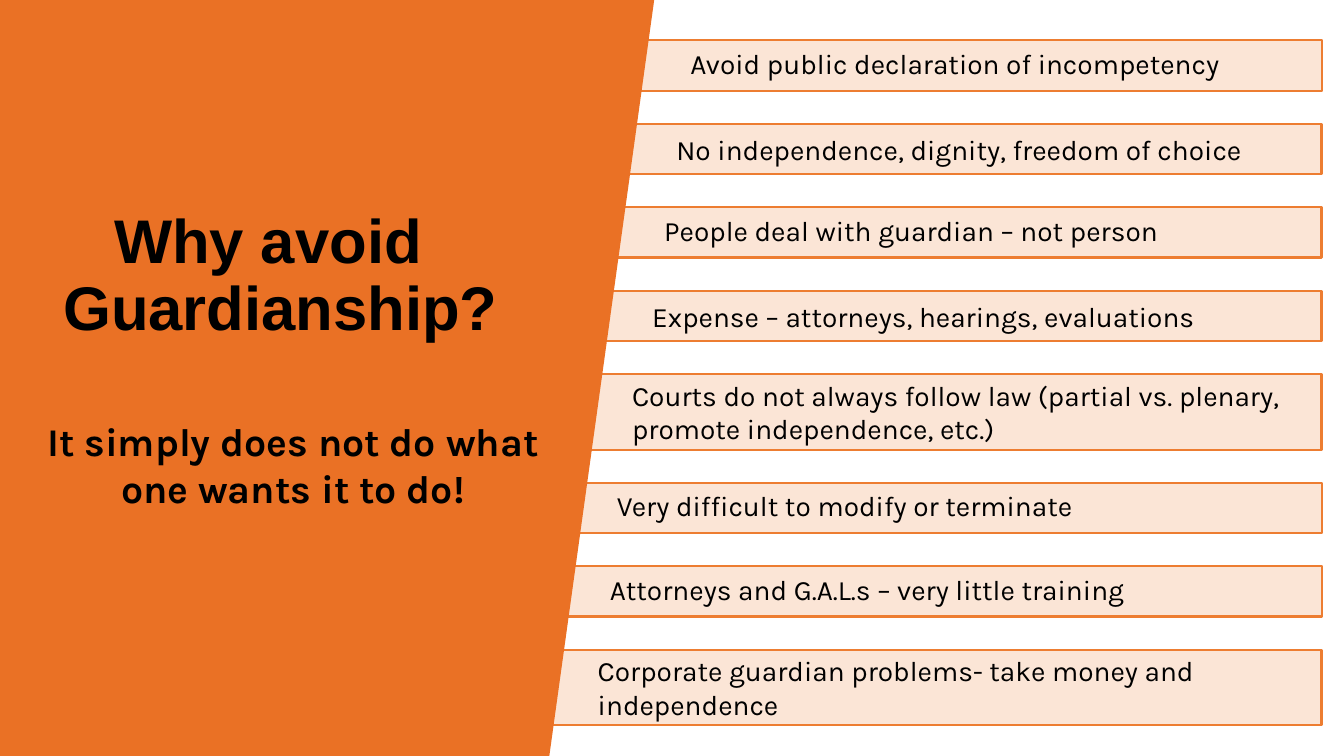
import pptx
import pptx.util
import pptx.dml.color
import pptx.enum.shapes
import pptx.enum.text

Pt = pptx.util.Pt
RGB = pptx.dml.color.RGBColor
ALIGN = pptx.enum.text.PP_ALIGN
ANCHOR = pptx.enum.text.MSO_ANCHOR

# Content: left edge, height, line spacing, wording
BARS = [
    (457.9, 36, 0.9, "Avoid public declaration of incompetency"),
    (447.8, 36, 1, "No independence, dignity, freedom of choice"),
    (439.2, 36, 0.9, "People deal with guardian – not person"),
    (430.6, 36, 1, "Expense – attorneys, hearings, evaluations"),
    (416.2, 54, 1, "Courts do not always follow law (partial vs. plenary, "
                   "promote independence, etc.)"),
    (405.4, 36, 0.9, "Very difficult to modify or terminate"),
    (400.3, 36, 0.9, "Attorneys and G.A.L.s – very little training"),
    (391.7, 54, 1, "Corporate guardian problems- take money and independence"),
]
TITLE = "Why avoid Guardianship?"
CLAIM = "It simply does not do what one wants it to do!"

# Layout and colours
WIDE, HIGH = 960, 540
TOP, RIGHT, GAP = 28.8, 944, 23.6
PANEL = [(-11.5, 0), (467.3, 0), (392.4, HIGH), (-11.5, HIGH)]
PEACH = RGB(0xFB, 0xE5, 0xD6)
EDGE = RGB(0xED, 0x7D, 0x31)
ORANGE = RGB(0xEA, 0x71, 0x25)
BLACK = RGB(0, 0, 0)

deck = pptx.Presentation()
deck.slide_width, deck.slide_height = Pt(WIDE), Pt(HIGH)
slide = deck.slides.add_slide(deck.slide_layouts[6])
shapes = slide.shapes


def write(shape, text, size, face, align, bold=False):
    frame = shape.text_frame
    frame.word_wrap = True
    frame.text = text
    para = frame.paragraphs[0]
    para.alignment = align
    font = para.runs[0].font
    font.size, font.name, font.bold = Pt(size), face, bold
    font.color.rgb = BLACK
    return para


# Reason bars, stacked with equal gaps
top = TOP
for left, high, space, text in BARS:
    bar = shapes.add_shape(pptx.enum.shapes.MSO_SHAPE.RECTANGLE,
                           Pt(left), Pt(top), Pt(RIGHT - left), Pt(high))
    bar.shadow.inherit = False
    bar.fill.solid()
    bar.fill.fore_color.rgb = PEACH
    bar.line.color.rgb = EDGE
    bar.line.width = Pt(1.5)
    para = write(bar, text, 20, "Karla", ALIGN.LEFT)
    para.line_spacing = space
    frame = bar.text_frame
    frame.vertical_anchor = ANCHOR.MIDDLE
    frame.margin_left = Pt(35.3)
    frame.margin_top = frame.margin_right = frame.margin_bottom = Pt(4.3)
    top += high + GAP

# Slanted panel over the left ends of the bars
points = [(Pt(x), Pt(y)) for x, y in PANEL]
pen = shapes.build_freeform(*points[0])
pen.add_line_segments(points[1:], close=True)
panel = pen.convert_to_shape()
panel.shadow.inherit = False
panel.fill.solid()
panel.fill.fore_color.rgb = ORANGE
panel.line.fill.background()

# Title with a hanging indent
box = shapes.add_textbox(Pt(-33.8), Pt(146.9), Pt(414.7), Pt(167.8))
para = write(box, TITLE, 44, "Arial", ALIGN.CENTER, True)
para.line_spacing = 0.9
props = para._p.get_or_add_pPr()
props.set("marL", str(Pt(54)))
props.set("indent", str(Pt(-18)))

# Claim below the title
box = shapes.add_textbox(Pt(11.5), Pt(294.5), Pt(395.3), Pt(74.9))
write(box, CLAIM, 28, "Karla", ALIGN.CENTER, True)

deck.save("out.pptx")
